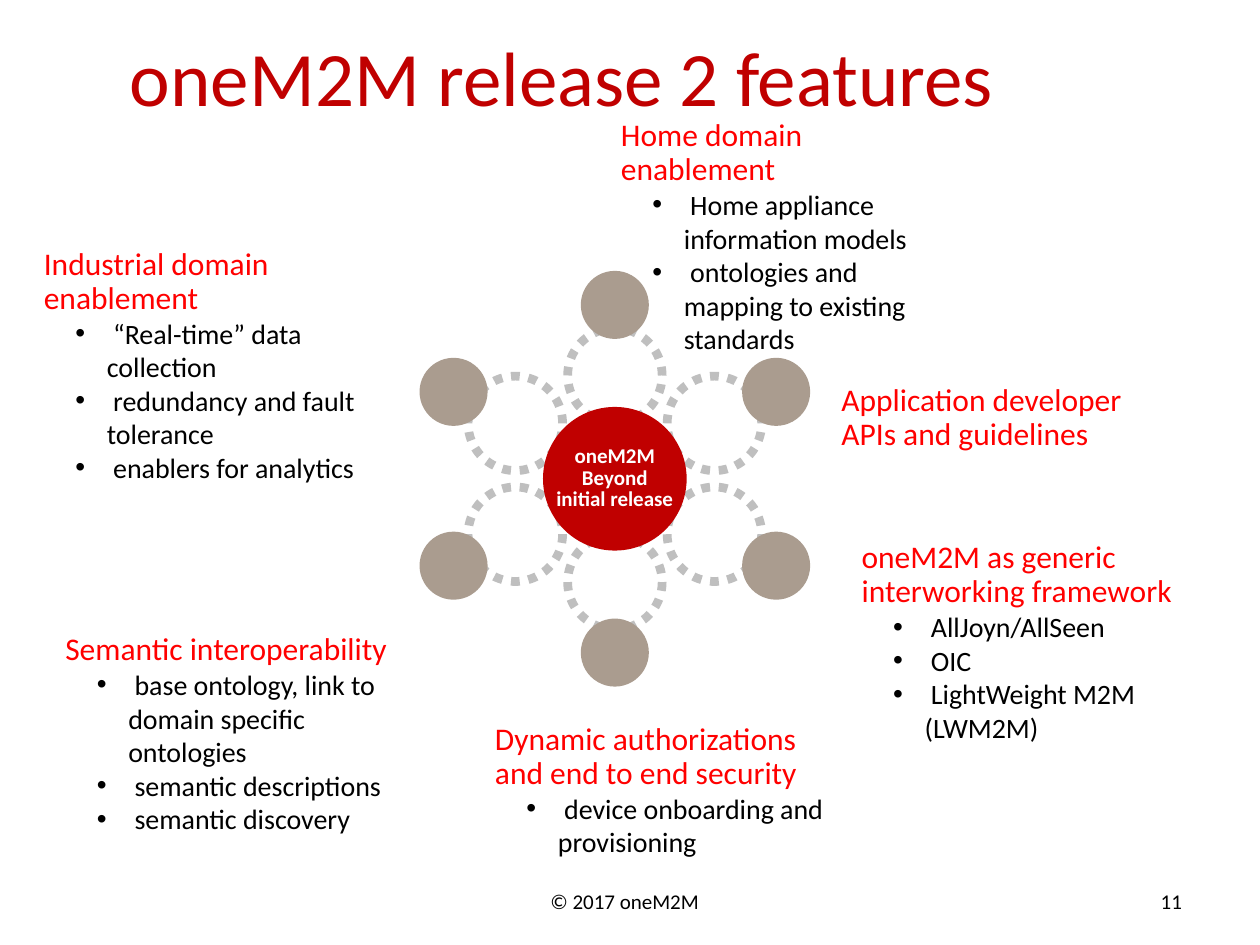
import pptx
import pptx.dml.color
import pptx.enum.dml
import pptx.enum.shapes
import pptx.enum.text
import pptx.oxml
import pptx.oxml.ns
import pptx.util
from pptx.util import Inches

RGBColor = pptx.dml.color.RGBColor
CRIMSON = RGBColor(0xC0, 0x00, 0x00)
RED = RGBColor(0xFF, 0x00, 0x00)
BLACK = RGBColor(0x00, 0x00, 0x00)
WHITE = RGBColor(0xFF, 0xFF, 0xFF)
TAUPE = RGBColor(0xAA, 0x9C, 0x8F)
GREY = RGBColor(0xBF, 0xBF, 0xBF)
ALIGN = pptx.enum.text.PP_ALIGN

# Feature blocks: left, top, height, heading, bullets
FEATURES = [
    (0.25, 1.92, 2.03, "Industrial domain enablement",
     [" “Real-time” data collection", " redundancy and fault tolerance",
      " enablers for analytics"]),
    (0.42, 4.98, 1.96, "Semantic interoperability",
     [" base ontology, link to domain specific ontologies",
      " semantic descriptions", " semantic discovery"]),
    (3.83, 5.69, 1.43, "Dynamic authorizations and end to end security",
     [" device onboarding and provisioning"]),
    (6.74, 4.25, 2.27, "oneM2M as generic interworking framework",
     [" AllJoyn/AllSeen", " OIC", " LightWeight M2M (LWM2M)"]),
    (4.83, 0.9, 2.27, "Home domain enablement",
     [" Home appliance information models",
      " ontologies and mapping to existing standards"]),
    (6.58, 3, 0.92, "Application developer APIs and guidelines", []),
]
FEATURE_WIDTH = 2.84

# Offsets from the hub centre for the upper half; the lower half mirrors them
LOOP_OFFSETS = [(0, 0.82), (0.79, 0.44), (-0.79, 0.44)]
NODE_OFFSETS = [(0, 1.38), (1.28, 0.69), (-1.28, 0.69)]


def write_paragraph(para, text, size, color, align=ALIGN.LEFT, spacing=1.0, bold=False):
    para.text = text
    para.alignment = align
    para.line_spacing = spacing
    for span in para.runs:
        span.font.name = "Calibri"
        span.font.size = pptx.util.Pt(size)
        span.font.bold = bold
        span.font.color.rgb = color


def add_bullet(para):
    properties = para._p.get_or_add_pPr()
    properties.set("lvl", "1")
    properties.set("marL", str(Inches(0.5)))
    properties.set("indent", str(Inches(-0.25)))
    namespace = pptx.oxml.ns.nsdecls("a")
    properties.append(pptx.oxml.parse_xml(f'<a:buFont {namespace} typeface="Arial"/>'))
    properties.append(pptx.oxml.parse_xml(f'<a:buChar {namespace} char="•"/>'))


def add_line(page, left, top, width, height, text, size, color, align,
             spacing=1.0, wrap=False):
    box = page.shapes.add_textbox(Inches(left), Inches(top), Inches(width), Inches(height))
    box.text_frame.word_wrap = wrap
    write_paragraph(box.text_frame.paragraphs[0], text, size, color, align, spacing)


def add_feature(page, left, top, width, height, heading, bullets):
    box = page.shapes.add_textbox(Inches(left), Inches(top), Inches(width), Inches(height))
    frame = box.text_frame
    frame.word_wrap = True
    write_paragraph(frame.paragraphs[0], heading, 18, RED, spacing=0.9)
    for bullet in bullets:
        para = frame.add_paragraph()
        add_bullet(para)
        write_paragraph(para, bullet, 16, BLACK)


def add_circle(parent, center_x, center_y, size, fill=None, flipped=False):
    circle = parent.shapes.add_shape(
        pptx.enum.shapes.MSO_SHAPE.OVAL, Inches(center_x - size / 2),
        Inches(center_y - size / 2), Inches(size), Inches(size))
    circle.shadow.inherit = False
    if flipped:
        circle._element.spPr.xfrm.set("flipV", "1")
    if fill is None:
        circle.fill.background()
        circle.line.color.rgb = GREY
        circle.line.width = pptx.util.Pt(5)
        circle.line.dash_style = pptx.enum.dml.MSO_LINE.ROUND_DOT
    else:
        circle.fill.solid()
        circle.fill.fore_color.rgb = fill
        circle.line.fill.background()
    return circle


def add_hub_diagram(page, center_x, center_y):
    group = page.shapes.add_group_shape()

    # Dotted loops, then the outer nodes
    for offsets, size, fill in ((LOOP_OFFSETS, 0.75, None), (NODE_OFFSETS, 0.54, TAUPE)):
        for side in (-1, 1):
            for dx, dy in offsets:
                add_circle(group, center_x + dx, center_y + side * dy, size, fill, side > 0)

    # Hub with its label
    hub = add_circle(group, center_x, center_y, 1.14, CRIMSON)
    frame = hub.text_frame
    frame.word_wrap = False
    frame.vertical_anchor = pptx.enum.text.MSO_ANCHOR.MIDDLE
    frame.margin_left = frame.margin_right = frame.margin_top = frame.margin_bottom = 0
    frame.text = "oneM2M\nBeyond\ninitial release"
    for para in frame.paragraphs:
        write_paragraph(para, para.text, 12, WHITE, ALIGN.CENTER, 0.85, bold=True)


def main():
    deck = pptx.Presentation()
    deck.slide_width, deck.slide_height = Inches(10), Inches(7.5)
    page = deck.slides.add_slide(deck.slide_layouts[6])

    # Footer
    add_line(page, 4.27, 7, 1.4, 0.3, "© 2017 oneM2M", 12, BLACK, ALIGN.LEFT)
    add_line(page, 9.08, 7, 0.4, 0.3, "11", 12, BLACK, ALIGN.RIGHT)

    # Title
    add_line(page, 0.5, 0.3, 7.92, 1.25, "oneM2M release 2 features", 44, CRIMSON,
             ALIGN.CENTER, 0.85, wrap=True)

    # Diagram and the features around it
    add_hub_diagram(page, 4.88, 3.8)
    for left, top, height, heading, bullets in FEATURES:
        add_feature(page, left, top, FEATURE_WIDTH, height, heading, bullets)

    deck.save("out.pptx")


if __name__ == "__main__":
    main()
